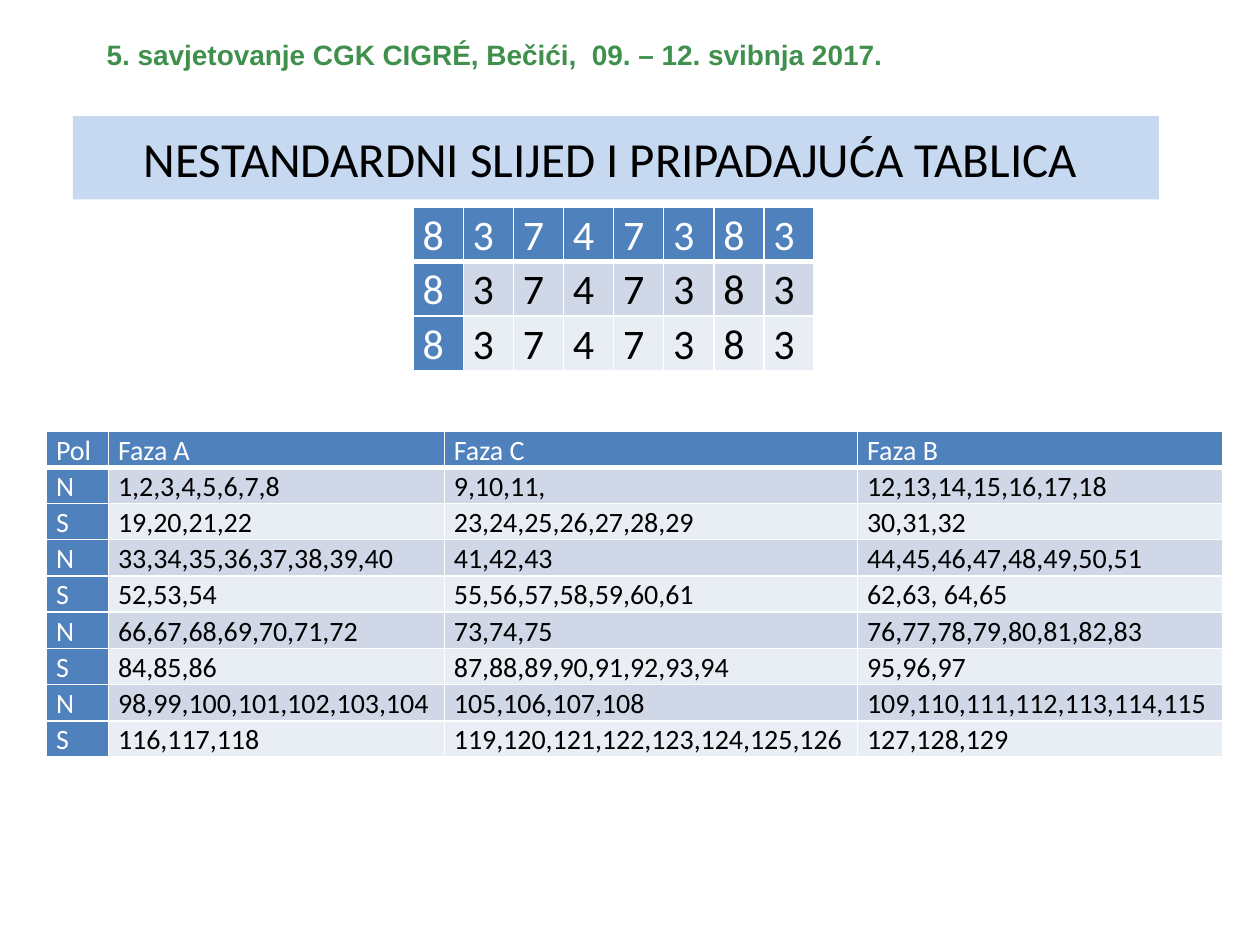
from lxml import etree
from pptx import Presentation
from pptx.dml.color import RGBColor
from pptx.enum.text import MSO_ANCHOR, PP_ALIGN
from pptx.oxml.ns import qn
from pptx.util import Cm, Pt

LEFT, CENTER, JUSTIFY = PP_ALIGN.LEFT, PP_ALIGN.CENTER, PP_ALIGN.JUSTIFY
TOP, MIDDLE = MSO_ANCHOR.TOP, MSO_ANCHOR.MIDDLE

WHITE, BLACK, GREEN = "FFFFFF", "000000", "40904D"
TITLE_FILL, HEAD_FILL = "C6D9F1", "4F81BD"
BAND_FILLS = ["E9EDF4", "D0D8E8"]

SEQUENCE_ROWS = [list("83747383")] * 3
PHASE_ROWS = [
    ["Pol", "Faza A", "Faza C", "Faza B"],
    ["N", "1,2,3,4,5,6,7,8", "9,10,11,", "12,13,14,15,16,17,18"],
    ["S", "19,20,21,22", "23,24,25,26,27,28,29", "30,31,32"],
    ["N", "33,34,35,36,37,38,39,40", "41,42,43", "44,45,46,47,48,49,50,51"],
    ["S", "52,53,54", "55,56,57,58,59,60,61", "62,63, 64,65"],
    ["N", "66,67,68,69,70,71,72", "73,74,75", "76,77,78,79,80,81,82,83"],
    ["S", "84,85,86", "87,88,89,90,91,92,93,94", "95,96,97"],
    ["N", "98,99,100,101,102,103,104", "105,106,107,108", "109,110,111,112,113,114,115"],
    ["S", "116,117,118", "119,120,121,122,123,124,125,126", "127,128,129"],
]


def rgb(value):
    return RGBColor.from_string(value)


def set_fill(obj, color):
    obj.fill.solid()
    obj.fill.fore_color.rgb = rgb(color)


def set_text(tf, text, size, color, font="Calibri", bold=False, align=LEFT, spacing=None):
    p = tf.paragraphs[0]
    p.alignment = align
    if spacing:
        p.line_spacing = spacing
    r = p.add_run()
    r.text = text
    r.font.size = Pt(size)
    r.font.name = font
    r.font.bold = bold
    r.font.color.rgb = rgb(color)


def set_borders(cell, color, bottom=1):
    tc_pr = cell._tc.get_or_add_tcPr()
    for side, width in (("L", 1), ("R", 1), ("T", 1), ("B", bottom)):
        ln = etree.SubElement(tc_pr, qn(f"a:ln{side}"), w=str(Pt(width)))
        fill = etree.SubElement(ln, qn("a:solidFill"))
        etree.SubElement(fill, qn("a:srgbClr"), val=color)


def add_event_line(s, text):
    sp = s.shapes.add_textbox(Cm(1.9), Cm(0.64), Cm(18.85), Cm(0.94))
    set_fill(sp, WHITE)
    sp.text_frame.word_wrap = True
    set_text(sp.text_frame, text, 16, GREEN, font="Arial", bold=True)


def add_title(s, text):
    sp = s.shapes.title
    sp.left, sp.top, sp.width, sp.height = Cm(1.47), Cm(2.34), Cm(21.89), Cm(1.68)
    set_fill(sp, TITLE_FILL)
    sp.text_frame.vertical_anchor = MIDDLE
    set_text(sp.text_frame, text, 28, BLACK, align=CENTER)


def add_grid(s, rows, left, top, widths, row_height, size, anchor):
    frame = s.shapes.add_table(len(rows), len(widths), Cm(left), Cm(top),
                               Cm(sum(widths)), Cm(row_height * len(rows)))
    table = frame.table
    table.first_col = True
    for col, width in zip(table.columns, widths):
        col.width = Cm(width)
    for i, row in enumerate(rows):
        table.rows[i].height = Cm(row_height)
        for j, text in enumerate(row):
            cell = table.cell(i, j)
            head = i == 0 or j == 0
            cell.margin_left = cell.margin_right = Cm(0.19)
            cell.margin_top = cell.margin_bottom = 0
            cell.vertical_anchor = anchor
            set_borders(cell, WHITE, bottom=3 if i == 0 else 1)
            set_fill(cell, HEAD_FILL if head else BAND_FILLS[i % 2])
            set_text(cell.text_frame, text, size, WHITE if head else BLACK,
                     align=JUSTIFY, spacing=1.07)


def main():
    prs = Presentation()
    prs.slide_width, prs.slide_height = Cm(25.4), Cm(19.05)
    s = prs.slides.add_slide(prs.slide_layouts[5])
    add_event_line(s, "5. savjetovanje CGK CIGRÉ, Bečići,  09. – 12. svibnja 2017.")
    add_title(s, "NESTANDARDNI SLIJED I PRIPADAJUĆA TABLICA ")
    add_grid(s, SEQUENCE_ROWS, 8.33, 4.17, [1.01] * 8, 1.1, 24, MIDDLE)
    add_grid(s, PHASE_ROWS, 0.94, 8.69, [1.25, 6.77, 8.33, 7.35], 0.73, 16, TOP)
    prs.save("out.pptx")


if __name__ == "__main__":
    main()
